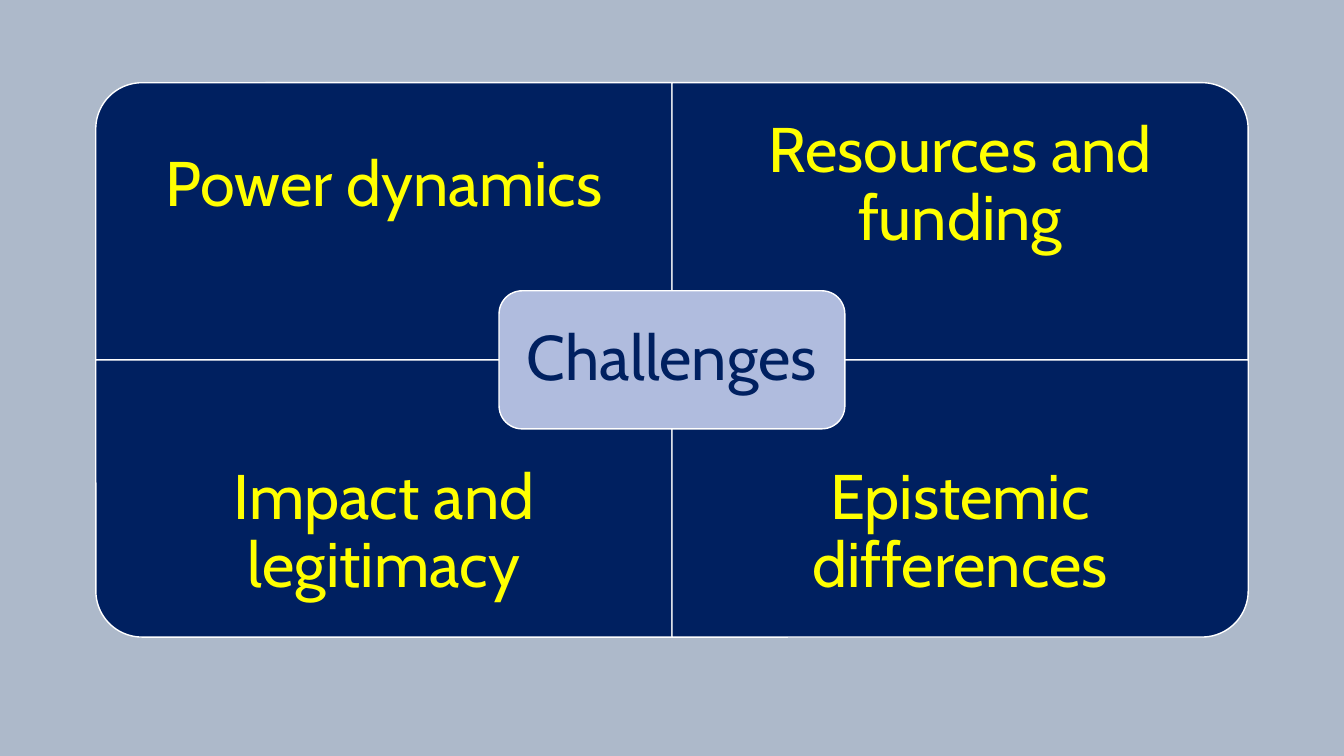
from pptx import Presentation
from pptx.dml.color import RGBColor
from pptx.enum.shapes import MSO_SHAPE
from pptx.enum.text import MSO_ANCHOR, PP_ALIGN
from pptx.util import Inches, Pt

BACKGROUND = RGBColor(0xAD, 0xB9, 0xCA)
NAVY = RGBColor(0x00, 0x20, 0x60)
LAVENDER = RGBColor(0xB0, 0xBC, 0xDE)
YELLOW = RGBColor(0xFF, 0xFF, 0x00)
WHITE = RGBColor(0xFF, 0xFF, 0xFF)
QUADRANT = MSO_SHAPE.ROUND_1_RECTANGLE
ROUNDED = MSO_SHAPE.ROUNDED_RECTANGLE
MIDDLE = MSO_ANCHOR.MIDDLE
CENTER = PP_ALIGN.CENTER

MID_X, MID_Y = 6.665, 3.57
PANEL_WIDTH, PANEL_HEIGHT = 5.715, 2.75
LABEL_HEIGHT = 2.06
HUB_WIDTH, HUB_HEIGHT = 3.43, 1.37


def add_panel(kind, center_x, center_y, width, height, fill):
    panel = slide.shapes.add_shape(
        kind, Inches(center_x - width / 2), Inches(center_y - height / 2),
        Inches(width), Inches(height))
    panel.shadow.inherit = False
    panel.fill.solid()
    panel.fill.fore_color.rgb = fill
    panel.line.color.rgb = WHITE
    panel.line.width = Pt(1)
    return panel


def write_label(box, text, color, inset):
    frame = box.text_frame
    frame.word_wrap = True
    frame.vertical_anchor = MIDDLE
    frame.margin_left = frame.margin_right = Inches(inset)
    frame.margin_top = frame.margin_bottom = Inches(inset)
    para = frame.paragraphs[0]
    para.text = text
    para.alignment = CENTER
    para.line_spacing = 0.9
    para.font.name = "Cabin"
    para.font.size = Pt(45)
    para.font.color.rgb = color


deck = Presentation()
deck.slide_width = Inches(13.33)
deck.slide_height = Inches(7.5)
slide = deck.slides.add_slide(deck.slide_layouts[6])
slide.background.fill.solid()
slide.background.fill.fore_color.rgb = BACKGROUND

challenges = [
    ("Power dynamics", -1, -1, 270),
    ("Resources and funding", 1, -1, 0),
    ("Impact and legitimacy", -1, 1, 180),
    ("Epistemic differences", 1, 1, 90),
]
for text, side_x, side_y, rotation in challenges:
    center_x = MID_X + side_x * PANEL_WIDTH / 2
    center_y = MID_Y + side_y * PANEL_HEIGHT / 2
    width, height = PANEL_WIDTH, PANEL_HEIGHT
    if rotation in (90, 270):
        width, height = height, width
    panel = add_panel(QUADRANT, center_x, center_y, width, height, NAVY)
    panel.rotation = rotation

    label_y = MID_Y + side_y * (PANEL_HEIGHT - LABEL_HEIGHT / 2)
    label = slide.shapes.add_textbox(
        Inches(center_x - PANEL_WIDTH / 2), Inches(label_y - LABEL_HEIGHT / 2),
        Inches(PANEL_WIDTH), Inches(LABEL_HEIGHT))
    write_label(label, text, YELLOW, 0.35)

hub = add_panel(ROUNDED, MID_X, MID_Y, HUB_WIDTH, HUB_HEIGHT, LAVENDER)
write_label(hub, "Challenges", NAVY, 0.19)

deck.save("out.pptx")
